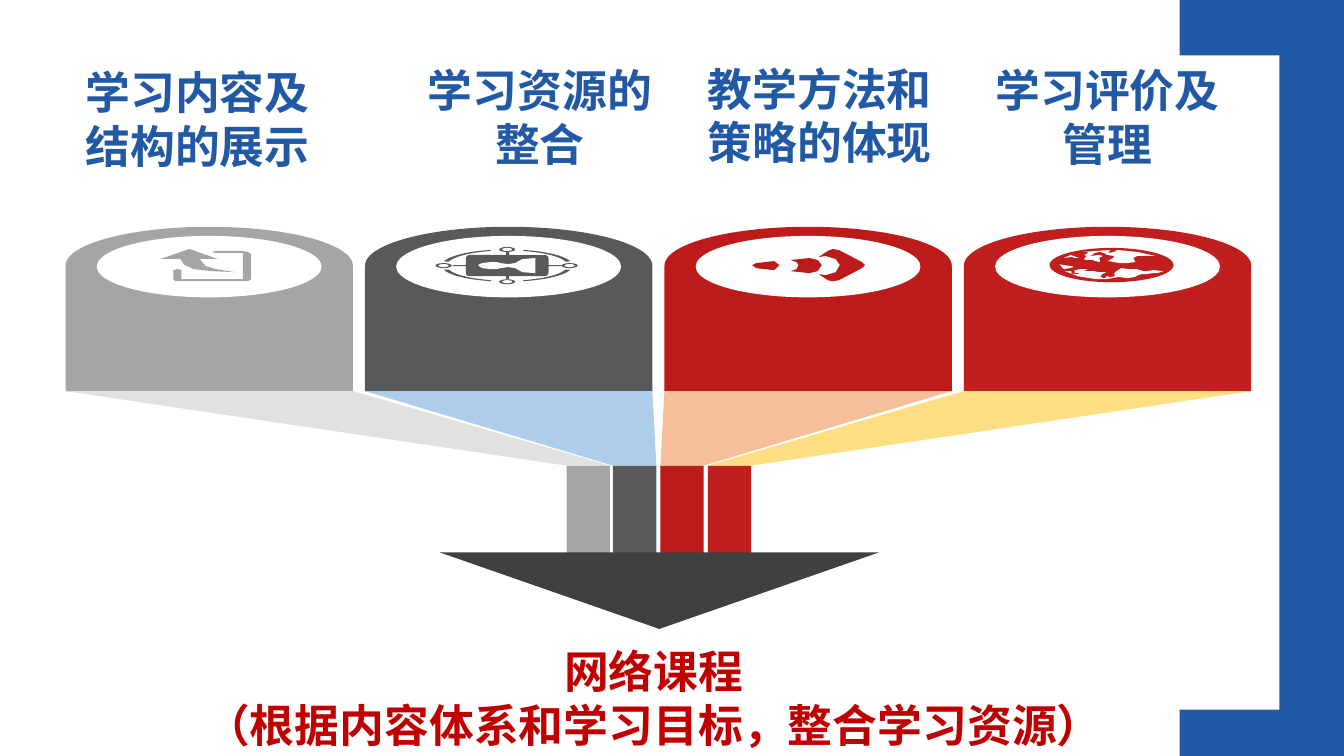
from dataclasses import dataclass
from math import cos, radians, sin

from pptx import Presentation
from pptx.dml.color import RGBColor
from pptx.enum.shapes import MSO_SHAPE
from pptx.enum.text import MSO_ANCHOR, PP_ALIGN
from pptx.oxml.ns import qn
from pptx.oxml.xmlchemy import OxmlElement
from pptx.shapes.autoshape import Shape
from pptx.util import Pt

PX = 9144  # EMU per px, 100 px to the inch
RECT, ROUND, OVAL = MSO_SHAPE.RECTANGLE, MSO_SHAPE.ROUNDED_RECTANGLE, MSO_SHAPE.OVAL
CENTER, TOP = PP_ALIGN.CENTER, MSO_ANCHOR.TOP

WHITE = RGBColor(0xFF, 0xFF, 0xFF)
BLUE = RGBColor(0x21, 0x59, 0xA5)
DARK_RED = RGBColor(0xC0, 0x00, 0x00)
CHARCOAL = RGBColor(0x40, 0x40, 0x40)
SILVER = RGBColor(0xA5, 0xA5, 0xA5)
GRAY = RGBColor(0x59, 0x59, 0x59)
CRIMSON = RGBColor(0xBD, 0x1A, 0x1A)
RED = RGBColor(0xC1, 0x1E, 0x1E)
PALE_GRAY = RGBColor(0xDB, 0xDB, 0xDB)
PALE_BLUE = RGBColor(0x9D, 0xC3, 0xE6)
PALE_ORANGE = RGBColor(0xF4, 0xB1, 0x83)
PALE_YELLOW = RGBColor(0xFF, 0xD9, 0x66)

Points = list[tuple[float, float]]


@dataclass
class Drum:
    title: str
    title_box: tuple[int, int, int, int]
    color: RGBColor
    beam_color: RGBColor


DRUMS = [
    Drum("学习内容及结构的展示", (65, 59, 262, 118), SILVER, PALE_GRAY),
    Drum("学习资源的整合", (393, 57, 285, 118), GRAY, PALE_BLUE),
    Drum("教学方法和策略的体现", (682, 56, 262, 118), CRIMSON, PALE_ORANGE),
    Drum("学习评价及管理", (956, 57, 285, 118), RED, PALE_YELLOW),
]
DRUM_LEFT, DRUM_PITCH, DRUM_W = 65, 297, 285
STEM_LEFT, STEM_SPAN, STEM_W = 562, 140, 43
DRUM_BOTTOM, STEM_TOP = 388, 462

SHARE_FRAME = [
    (249, 252), (249, 277), (246, 279), (240, 279), (180, 279), (174, 279), (172, 277),
    (172, 268), (176, 267), (180, 268), (180, 277), (241, 277), (241, 251), (214, 251),
    (210, 250), (214, 249), (240, 249), (246, 250),
]
SHARE_ARROW = [
    (216, 257), (188, 247), (159, 257), (179, 257), (183, 263), (192, 267), (209, 269),
    (233, 270), (214, 267), (204, 264), (198, 257),
]
PERSON = [
    (531, 256), (518, 257), (511, 261), (504, 262), (496, 261), (493, 260), (487, 260),
    (478, 261), (474, 263), (478, 266), (487, 267), (493, 267), (496, 266), (504, 265),
    (511, 266), (518, 270), (531, 271),
]
PENCIL_PARTS = [
    [(821, 249), (812, 255), (819, 254), (829, 257), (833, 263), (829, 270), (819, 273),
     (812, 272), (821, 278), (826, 279), (832, 278), (855, 266), (858, 263), (855, 260),
     (832, 248), (826, 247)],
    [(773, 263), (768, 259), (750, 261), (746, 263), (750, 266), (768, 268)],
    [(815, 263), (811, 258), (803, 256), (784, 258), (790, 260), (792, 263), (790, 267),
     (784, 269), (803, 271), (811, 269)],
]
GLOBE_GAPS = [
    [(1066, 256), (1063, 255), (1055, 256), (1062, 253), (1070, 256)],
    [(1120, 267), (1127, 267), (1131, 268), (1134, 269), (1138, 269), (1144, 268),
     (1154, 269), (1148, 271), (1143, 271), (1137, 272), (1132, 272), (1129, 273),
     (1125, 275), (1118, 276), (1111, 275), (1108, 275), (1103, 276), (1096, 277),
     (1087, 277), (1069, 274), (1056, 269), (1062, 269), (1063, 270), (1062, 271),
     (1065, 272), (1071, 272), (1070, 271), (1066, 271), (1066, 268), (1072, 267),
     (1079, 267), (1076, 268), (1074, 268), (1078, 269), (1081, 269), (1085, 269),
     (1090, 270), (1097, 270), (1093, 272), (1093, 273), (1091, 274), (1094, 276),
     (1096, 276), (1098, 274), (1101, 275), (1106, 274), (1105, 272), (1106, 270),
     (1109, 268), (1112, 266)],
    [(1055, 263), (1063, 264), (1065, 265), (1056, 267), (1054, 266), (1051, 262)],
    [(1105, 250), (1108, 248), (1128, 250), (1146, 254), (1139, 254), (1128, 254),
     (1124, 256), (1126, 260), (1118, 261), (1110, 261), (1099, 259), (1104, 256),
     (1105, 254), (1098, 253), (1095, 251), (1091, 250), (1086, 251), (1081, 254),
     (1090, 253), (1094, 254), (1090, 256), (1091, 258), (1091, 260), (1086, 259),
     (1084, 258), (1077, 258), (1075, 257), (1078, 254), (1075, 253), (1078, 252),
     (1079, 250), (1074, 250), (1101, 248), (1099, 251)],
]


def paint(s: Shape, color: RGBColor, opacity: int = 100) -> None:
    s.shadow.inherit = False
    s.fill.solid()
    s.fill.fore_color.rgb = color
    s.line.fill.background()
    if opacity < 100:
        alpha = OxmlElement("a:alpha")
        alpha.set("val", str(opacity * 1000))
        s.element.spPr.find(qn("a:solidFill"))[0].append(alpha)


def add_box(shapes, kind: MSO_SHAPE, x: int, y: int, w: int, h: int, color: RGBColor) -> None:
    paint(shapes.add_shape(kind, x * PX, y * PX, w * PX, h * PX), color)


def add_polygon(shapes, points: Points, color: RGBColor, opacity: int = 100) -> None:
    emu = [(round(x * PX), round(y * PX)) for x, y in points]
    builder = shapes.build_freeform(*emu[0])
    builder.add_line_segments(emu[1:], close=True)
    paint(builder.convert_to_shape(), color, opacity)


def add_text(shapes, text: str, box: tuple[int, int, int, int], *, font: str,
             color: RGBColor, size: int = 32, bold: bool = True) -> None:
    tf = shapes.add_textbox(*(v * PX for v in box)).text_frame
    tf.word_wrap = True
    tf.vertical_anchor = TOP
    for i, line in enumerate(text.split("\n")):
        p = tf.add_paragraph() if i else tf.paragraphs[0]
        p.alignment = CENTER
        r = p.add_run()
        r.text = line
        r.font.name, r.font.size, r.font.bold = font, Pt(size), bold
        r.font.color.rgb = color


def add_drum(shapes, i: int, drum: Drum) -> None:
    """Draw one drum with its beam and its stem down to the arrow."""
    x = DRUM_LEFT + i * DRUM_PITCH
    stem = STEM_LEFT + i * STEM_SPAN // 3
    add_box(shapes, RECT, x, 265, DRUM_W, DRUM_BOTTOM - 265, drum.color)
    add_box(shapes, RECT, stem, STEM_TOP, STEM_W, 93, drum.color)
    beam = [(x, DRUM_BOTTOM), (x + DRUM_W, DRUM_BOTTOM),
            (stem + STEM_W, STEM_TOP), (stem, STEM_TOP)]
    add_polygon(shapes, beam, drum.beam_color, opacity=82)
    add_box(shapes, OVAL, x, 225, DRUM_W, 77, drum.color)
    add_box(shapes, OVAL, x + 31, 234, 223, 61, WHITE)


def ring_quarter(start: int) -> Points:
    """Outline of a thin 60 degree arc of the ring around the screen."""
    angles = [radians(a) for a in range(start, start + 61, 6)]
    outer = [(503 + 65 * cos(a), 263.5 + 16 * sin(a)) for a in angles]
    inner = [(503 + 60 * cos(a), 263.5 + 15 * sin(a)) for a in reversed(angles)]
    return outer + inner


def add_network_icon(shapes) -> None:
    for start in range(15, 360, 90):
        add_polygon(shapes, ring_quarter(start), GRAY)
    add_box(shapes, RECT, 449, 263, 108, 1, GRAY)
    add_box(shapes, RECT, 502, 249, 3, 28, GRAY)
    for x, y in [(432, 261), (557, 261), (495, 245), (495, 277)]:
        add_box(shapes, OVAL, x, y, 16, 5, GRAY)
        add_box(shapes, OVAL, x + 3, y + 1, 10, 3, WHITE)
    add_box(shapes, ROUND, 462, 253, 82, 21, GRAY)
    add_polygon(shapes, PERSON, WHITE)


def add_globe_icon(shapes) -> None:
    add_box(shapes, OVAL, 1041, 246, 123, 34, RED)
    for gap in GLOBE_GAPS:
        add_polygon(shapes, gap, WHITE)


def main() -> None:
    prs = Presentation()
    prs.slide_width, prs.slide_height = 1333 * PX, 750 * PX
    shapes = prs.slides.add_slide(prs.slide_layouts[6]).shapes

    add_box(shapes, RECT, 1170, 0, 163, 750, BLUE)
    add_box(shapes, RECT, 969, 55, 300, 649, WHITE)
    for i, drum in enumerate(DRUMS):
        add_drum(shapes, i, drum)
        add_text(shapes, drum.title, drum.title_box, font="Noto Sans CJK SC", color=BLUE)
    add_polygon(shapes, [(436, 548), (872, 548), (654, 624)], CHARCOAL)

    for part in (SHARE_FRAME, SHARE_ARROW):
        add_polygon(shapes, part, SILVER)
    add_network_icon(shapes)
    for part in PENCIL_PARTS:
        add_polygon(shapes, part, CRIMSON)
    add_globe_icon(shapes)

    add_text(shapes, "网络课程\n（根据内容体系和学习目标，整合学习资源）",
             (150, 634, 997, 118), font="Arial", color=DARK_RED)
    prs.save("out.pptx")


if __name__ == "__main__":
    main()
